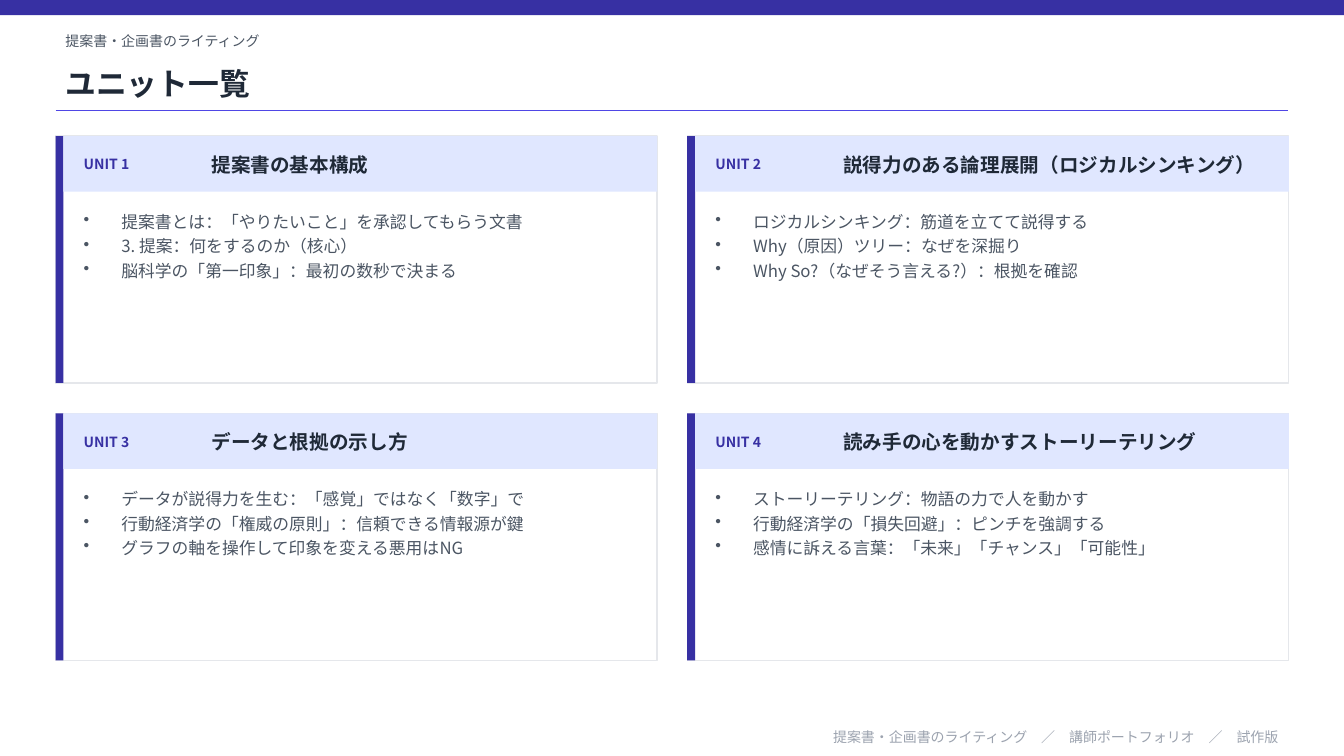
from dataclasses import dataclass

from lxml.etree import SubElement
from pptx import Presentation
from pptx.dml.color import RGBColor
from pptx.enum.shapes import MSO_CONNECTOR, MSO_SHAPE
from pptx.enum.text import MSO_ANCHOR, PP_ALIGN
from pptx.oxml.ns import qn
from pptx.util import Cm, Pt


@dataclass(frozen=True)
class Theme:
    font: str = "Noto Sans CJK JP"
    primary: str = "3730A3"
    rule: str = "4F46E5"
    band: str = "E0E7FF"
    surface: str = "FFFFFF"
    border: str = "E5E7EB"
    heading: str = "1F2937"
    body: str = "4B5563"
    muted: str = "9CA3AF"
    title_size: int = 22
    unit_size: int = 14
    body_size: int = 12
    label_size: int = 10


class SlideBuilder:
    def __init__(self, slide, theme):
        self.slide = slide
        self.theme = theme

    def rect(self, left, top, width, height, fill, line=None):
        panel = self.slide.shapes.add_shape(
            MSO_SHAPE.RECTANGLE, Cm(left), Cm(top), Cm(width), Cm(height))
        panel.shadow.inherit = False
        panel.fill.solid()
        panel.fill.fore_color.rgb = RGBColor.from_string(fill)
        if line:
            panel.line.color.rgb = RGBColor.from_string(line)
            panel.line.width = Pt(1)
        else:
            panel.line.fill.background()

    def rule(self, left, top, width):
        divider = self.slide.shapes.add_connector(
            MSO_CONNECTOR.STRAIGHT, Cm(left), Cm(top), Cm(left + width), Cm(top))
        divider.line.color.rgb = RGBColor.from_string(self.theme.rule)
        divider.line.width = Pt(1)
        SubElement(divider._element.spPr, qn("a:effectLst"))

    def text(self, left, top, width, height, content, size, color,
             bold=False, align=PP_ALIGN.LEFT, anchor=MSO_ANCHOR.MIDDLE):
        frame = self.slide.shapes.add_textbox(
            Cm(left), Cm(top), Cm(width), Cm(height)).text_frame
        frame.word_wrap = True
        frame.vertical_anchor = anchor
        frame.text = content
        for paragraph in frame.paragraphs:
            paragraph.alignment = align
            for run in paragraph.runs:
                run.font.size = Pt(size)
                run.font.bold = bold
                run.font.color.rgb = RGBColor.from_string(color)
                run.font.name = self.theme.font
                SubElement(run.font._element, qn("a:ea"), typeface=self.theme.font)
        return frame

    def bullets(self, left, top, width, height, points):
        frame = self.text(left, top, width, height, "\n".join(points),
                          self.theme.body_size, self.theme.body,
                          anchor=MSO_ANCHOR.TOP)
        for paragraph in frame.paragraphs:
            paragraph.space_after = Pt(3)
            properties = paragraph._p.get_or_add_pPr()
            properties.set("marL", str(Cm(0.95)))
            properties.set("indent", str(-Cm(0.95)))
            SubElement(properties, qn("a:buChar"), char="•")

    def unit_card(self, left, top, label, title, points):
        theme = self.theme
        width, height, accent = 15.16, 6.22, 0.2
        self.rect(left, top, width, height, theme.surface, theme.border)
        self.rect(left, top, accent, height, theme.primary)
        self.rect(left + accent, top, width - accent, 1.4, theme.band)
        self.text(left + 0.46, top + 0.2, 3.05, 1.02, label,
                  theme.label_size, theme.primary, bold=True)
        self.text(left + 3.68, top + 0.2, 11.1, 1.02, title,
                  theme.unit_size, theme.heading, bold=True)
        self.bullets(left + 0.46, top + 1.78, 14.25, 4.06, points)


UNITS = [
    ("提案書の基本構成", [
        "提案書とは：「やりたいこと」を承認してもらう文書",
        "3. 提案：何をするのか（核心）",
        "脳科学の「第一印象」：最初の数秒で決まる",
    ]),
    ("説得力のある論理展開（ロジカルシンキング）", [
        "ロジカルシンキング：筋道を立てて説得する",
        "Why（原因）ツリー：なぜを深掘り",
        "Why So?（なぜそう言える?）：根拠を確認",
    ]),
    ("データと根拠の示し方", [
        "データが説得力を生む：「感覚」ではなく「数字」で",
        "行動経済学の「権威の原則」：信頼できる情報源が鍵",
        "グラフの軸を操作して印象を変える悪用はNG",
    ]),
    ("読み手の心を動かすストーリーテリング", [
        "ストーリーテリング：物語の力で人を動かす",
        "行動経済学の「損失回避」：ピンチを強調する",
        "感情に訴える言葉：「未来」「チャンス」「可能性」",
    ]),
]


def main():
    presentation = Presentation()
    presentation.slide_width = Cm(33.87)
    presentation.slide_height = Cm(19.05)
    theme = Theme()
    overview = SlideBuilder(
        presentation.slides.add_slide(presentation.slide_layouts[6]), theme)

    margin, content_width = 1.4, 31.06
    course = "提案書・企画書のライティング"
    overview.rect(0, 0, 33.87, 0.38, theme.primary)
    overview.text(margin, 0.64, content_width, 0.76, course,
                  theme.label_size, theme.body)
    overview.text(margin, 1.4, content_width, 1.4, "ユニット一覧",
                  theme.title_size, theme.heading, bold=True)
    overview.rule(margin, 2.79, content_width)

    for index, (title, points) in enumerate(UNITS):
        row, column = divmod(index, 2)
        overview.unit_card(margin + column * 15.92, 3.43 + row * 6.99,
                           f"UNIT {index + 1}", title, points)

    overview.text(margin, 18.29, content_width, 0.56,
                  f"{course}　／　講師ポートフォリオ　／　試作版",
                  theme.label_size, theme.muted, align=PP_ALIGN.RIGHT)
    presentation.save("out.pptx")


if __name__ == "__main__":
    main()
